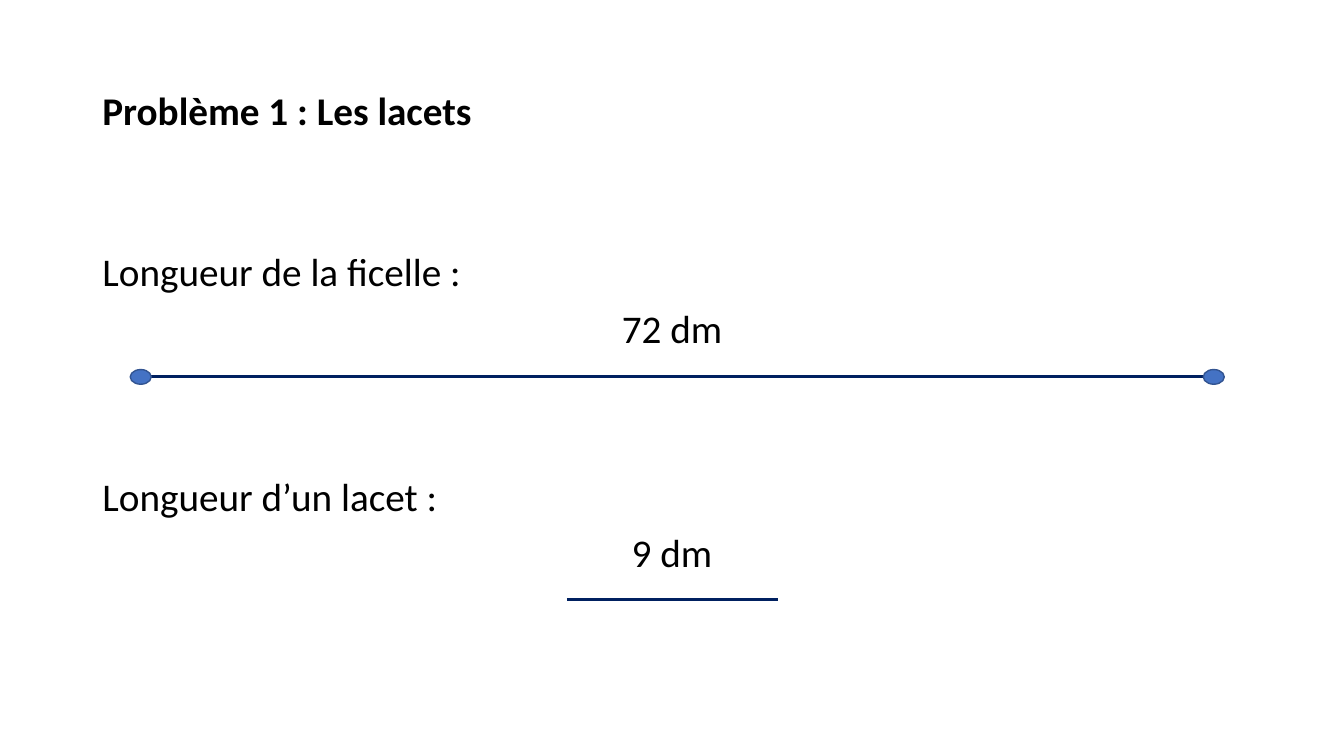
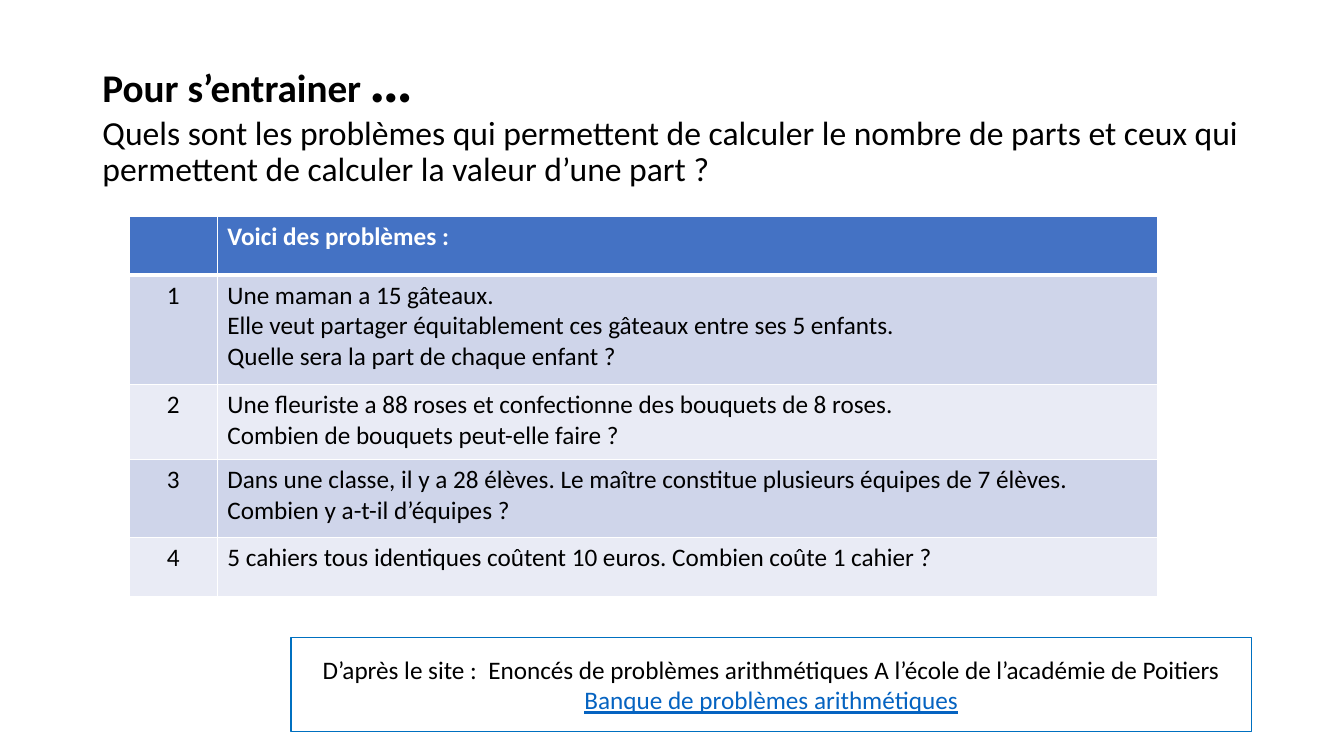
from lxml.etree import SubElement
from pptx import Presentation
from pptx.dml.color import RGBColor
from pptx.enum.shapes import MSO_CONNECTOR, MSO_SHAPE
from pptx.enum.text import MSO_ANCHOR, MSO_AUTO_SIZE, PP_ALIGN
from pptx.oxml.ns import qn
from pptx.util import Pt

EMU_PER_PX = 9525
SLIDE_SIZE = (1280, 720)
LEFT, TITLE_TOP, WIDTH = 88, 38, 1104

BLACK = RGBColor(0x00, 0x00, 0x00)
WHITE = RGBColor(0xFF, 0xFF, 0xFF)
NAVY = RGBColor(0x00, 0x20, 0x60)
BLUE = RGBColor(0x44, 0x72, 0xC4)
DARK_BLUE = RGBColor(0x32, 0x54, 0x91)
FRAME_BLUE = RGBColor(0x00, 0x70, 0xC0)
LINK_BLUE = RGBColor(0x05, 0x63, 0xC1)
BAND_COLORS = (RGBColor(0xCF, 0xD5, 0xEA), RGBColor(0xE9, 0xEB, 0xF5))

BASE = {"name": "Calibri", "size": Pt(18), "bold": False, "color": BLACK}
LARGE = BASE | {"size": Pt(28)}
HEADING = LARGE | {"bold": True}
ELLIPSIS = HEADING | {"size": Pt(44)}
QUESTION = BASE | {"size": Pt(24)}
TABLE_HEADER = BASE | {"bold": True, "color": WHITE}
LINK = BASE | {"underline": True, "color": LINK_BLUE}

PROBLEMS = [
    "Une maman a 15 gâteaux.\n"
    "Elle veut partager équitablement ces gâteaux entre ses 5 enfants.\n"
    "Quelle sera la part de chaque enfant ?",
    "Une fleuriste a 88 roses et confectionne des bouquets de 8 roses.\n"
    "Combien de bouquets peut-elle faire ?",
    "Dans une classe, il y a 28 élèves. Le maître constitue plusieurs équipes de 7 élèves.\n"
    "Combien y a-t-il d’équipes ?",
    "5 cahiers tous identiques coûtent 10 euros. Combien coûte 1 cahier ?",
]


def px(*lengths):
    return [round(length * EMU_PER_PX) for length in lengths]


def write(paragraph, runs, align=PP_ALIGN.LEFT, **paragraph_format):
    """Add (text, format) runs; a newline in a text becomes a line break."""
    paragraph.alignment = align
    for name, value in paragraph_format.items():
        setattr(paragraph, name, value)
    for text, text_format in runs:
        for index, line in enumerate(text.split("\n")):
            if index:
                paragraph.add_line_break()
            if line:
                run = paragraph.add_run()
                run.text = line
                for name, value in text_format.items():
                    if name == "color":
                        run.font.color.rgb = value
                    else:
                        setattr(run.font, name, value)


def remove_bullet(paragraph):
    properties = paragraph._p.get_or_add_pPr()
    properties.set("marL", "0")
    properties.set("indent", "0")
    SubElement(properties, qn("a:buNone"))


def set_borders(cell, bottom):
    """Draw white borders, 1 pt except for the given bottom width."""
    properties = cell._tc.get_or_add_tcPr()
    widths = {"lnL": 1, "lnR": 1, "lnT": 1, "lnB": bottom}
    for index, (side, width) in enumerate(widths.items()):
        border = properties.makeelement(qn(f"a:{side}"), {"w": str(Pt(width))})
        fill = SubElement(border, qn("a:solidFill"))
        SubElement(fill, qn("a:srgbClr"), val=str(WHITE))
        properties.insert(index, border)


class Deck:
    def __init__(self):
        self.presentation = Presentation()
        self.presentation.slide_width, self.presentation.slide_height = px(*SLIDE_SIZE)
        self.slide = None

    def add_slide(self, layout_name):
        layout = self.presentation.slide_layouts.get_by_name(layout_name)
        self.slide = self.presentation.slides.add_slide(layout)

    def place(self, placeholder, box, anchor):
        """Move a placeholder and return its text frame."""
        placeholder.left, placeholder.top, placeholder.width, placeholder.height = px(*box)
        frame = placeholder.text_frame
        frame.word_wrap = True
        frame.auto_size = MSO_AUTO_SIZE.NONE
        frame.vertical_anchor = anchor
        return frame

    def title(self, runs, height):
        box = (LEFT, TITLE_TOP, WIDTH, height)
        frame = self.place(self.slide.shapes.title, box, MSO_ANCHOR.MIDDLE)
        write(frame.paragraphs[0], runs, line_spacing=0.9)

    def body(self, lines, box):
        """Fill the body with (text, alignment, points before) lines."""
        frame = self.place(self.slide.placeholders[1], box, MSO_ANCHOR.TOP)
        for index, (text, align, before) in enumerate(lines):
            paragraph = frame.add_paragraph() if index else frame.paragraphs[0]
            write(paragraph, [(text, LARGE)], align, line_spacing=0.9, space_before=Pt(before))
            remove_bullet(paragraph)

    def segment(self, left, right, y):
        line = self.slide.shapes.add_connector(MSO_CONNECTOR.STRAIGHT, *px(left, y, right, y))
        line.line.color.rgb = NAVY
        line.line.width = Pt(2.25)
        SubElement(line._element.spPr, qn("a:effectLst"))

    def shape(self, kind, box, fill, outline):
        shape = self.slide.shapes.add_shape(kind, *px(*box))
        shape.shadow.inherit = False
        shape.fill.solid()
        shape.fill.fore_color.rgb = fill
        shape.line.color.rgb = outline
        shape.line.width = Pt(1)
        return shape

    def dot(self, x, y, width=20, height=14):
        box = (x - width / 2, y - height / 2, width, height)
        self.shape(MSO_SHAPE.OVAL, box, BLUE, DARK_BLUE)

    def framed_text(self, lines, box):
        frame = self.shape(MSO_SHAPE.RECTANGLE, box, WHITE, FRAME_BLUE).text_frame
        frame.word_wrap = True
        frame.vertical_anchor = MSO_ANCHOR.MIDDLE
        for index, line in enumerate(lines):
            paragraph = frame.add_paragraph() if index else frame.paragraphs[0]
            write(paragraph, [line], PP_ALIGN.CENTER)

    def table(self, rows, left, top, widths, heights):
        box = px(left, top, sum(widths), sum(heights))
        table = self.slide.shapes.add_table(len(rows), len(widths), *box).table
        table.horz_banding = False
        for column, width in zip(table.columns, px(*widths)):
            column.width = width
        for index, (row, height) in enumerate(zip(table.rows, px(*heights))):
            row.height = height
            is_header = index == 0
            for column, cell in enumerate(row.cells):
                cell.fill.solid()
                cell.fill.fore_color.rgb = BLUE if is_header else BAND_COLORS[(index - 1) % 2]
                set_borders(cell, 3 if is_header else 1)
                text_format = TABLE_HEADER if is_header else BASE
                align = PP_ALIGN.LEFT if column else PP_ALIGN.CENTER
                write(cell.text_frame.paragraphs[0], [(rows[index][column], text_format)], align)


def build_laces(deck):
    deck.add_slide("Title and Content")
    deck.title([("Problème 1 : Les lacets", HEADING)], 139)
    deck.body(
        [
            ("Longueur de la ficelle :", PP_ALIGN.LEFT, 0),
            ("72 dm", PP_ALIGN.CENTER, 10),
            ("Longueur d’un lacet :", PP_ALIGN.LEFT, 90),
            ("9 dm", PP_ALIGN.CENTER, 10),
        ],
        (LEFT, 236, WIDTH, 404),
    )
    string_left, string_right, string_y = 134, 1156, 359
    deck.segment(string_left, string_right, string_y)
    for x in (string_left, string_right):
        deck.dot(x, string_y)
    deck.segment(540, 741, 571)


def build_practice(deck):
    deck.add_slide("Title Only")
    deck.title(
        [
            ("Pour s’entrainer ", HEADING),
            ("…\n", ELLIPSIS),
            ("Quels sont les problèmes qui permettent de calculer le nombre de parts "
             "et ceux qui permettent de calculer la valeur d’une part ?", QUESTION),
        ],
        151,
    )
    rows = [("", "Voici des problèmes :")]
    rows += [(str(number), problem) for number, problem in enumerate(PROBLEMS, 1)]
    deck.table(rows, 123, 206, (84, 896), (56, 104, 72, 74, 56))
    deck.framed_text(
        [
            ("D’après le site :  Enoncés de problèmes arithmétiques "
             "A l’école de l’académie de Poitiers", BASE),
            ("Banque de problèmes arithmétiques", LINK),
        ],
        (277, 607, 915, 90),
    )


def main():
    deck = Deck()
    build_laces(deck)
    build_practice(deck)
    deck.presentation.save("out.pptx")


if __name__ == "__main__":
    main()
